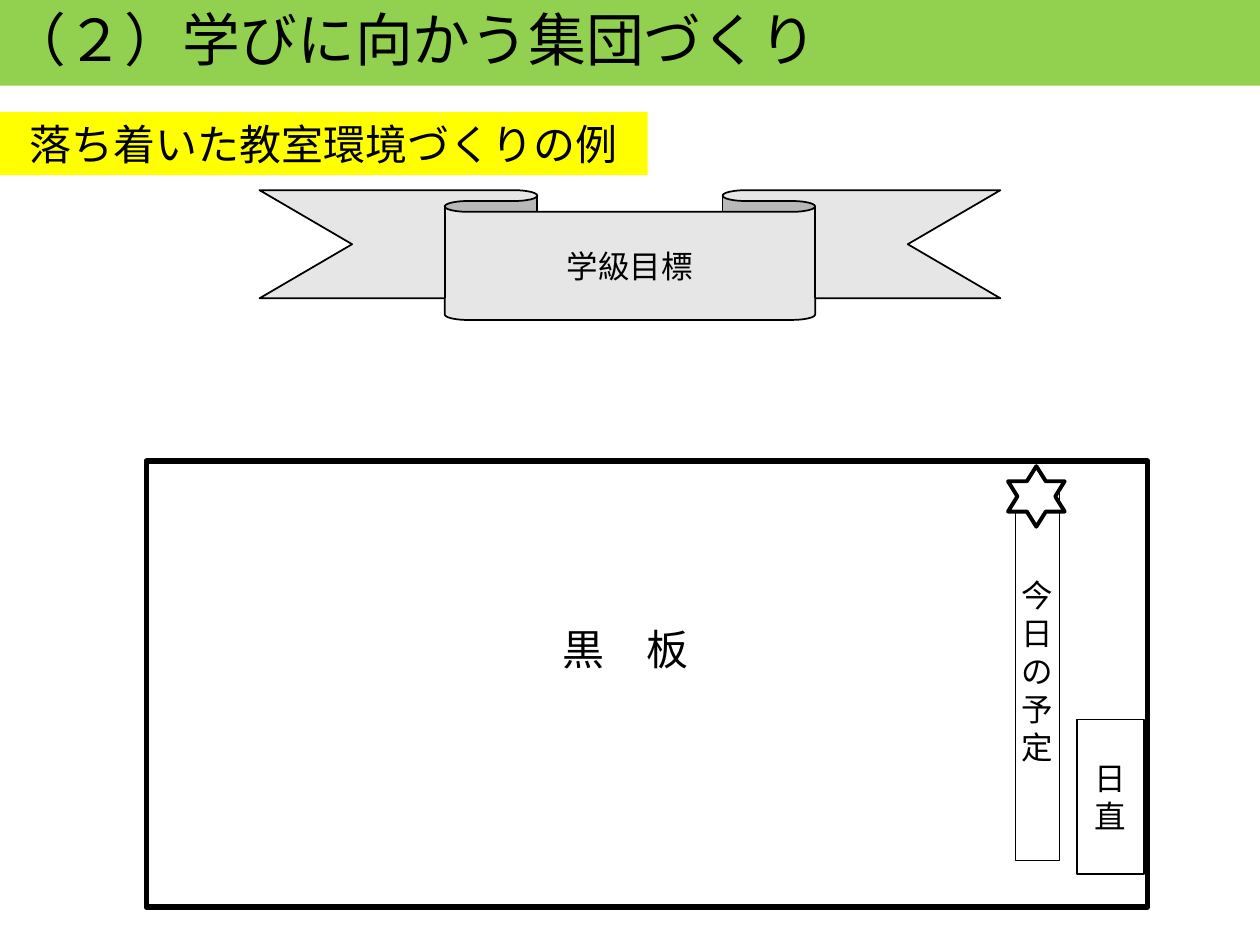
from pptx import Presentation
from pptx import util as u
from pptx.dml import color
from pptx.enum import shapes, text

COLUMNS, ROWS = 20, 15
SHAPE = shapes.MSO_SHAPE
MIDDLE = text.MSO_ANCHOR.MIDDLE
CENTER = text.PP_ALIGN.CENTER
NO_MARGINS = dict.fromkeys(
    ("margin_left", "margin_top", "margin_right", "margin_bottom"), 0)
TITLE_MARGINS = {
    "margin_left": u.Inches(0.07), "margin_right": u.Inches(0.07),
    "margin_top": u.Inches(0.04), "margin_bottom": u.Inches(0.04)}


def rgb(value):
    return color.RGBColor.from_string(value)


def apply(target, values):
    for name, value in values.items():
        setattr(target, name, value)


class ClassroomSlide:
    ink, paper = "000000", "FFFFFF"
    font = "Calibri"

    def __init__(self, presentation):
        self.cell_width = presentation.slide_width / COLUMNS
        self.cell_height = presentation.slide_height / ROWS
        self.slide = presentation.slides.add_slide(presentation.slide_layouts[6])

    def place(self, column, row, columns, rows):
        """Turn a grid area into left, top, width and height."""
        return [round(cells * size) for cells, size in zip(
            (column, row, columns, rows), (self.cell_width, self.cell_height) * 2)]

    def set_text(self, shape, lines, size, font=None, frame=None, paragraph_format=None):
        text_frame = shape.text_frame
        apply(text_frame, {"word_wrap": True, "vertical_anchor": MIDDLE, **(frame or {})})
        text_frame.text = "\n".join(lines)
        for paragraph in text_frame.paragraphs:
            apply(paragraph, {"alignment": CENTER, **(paragraph_format or {})})
            for run in paragraph.runs:
                apply(run.font, {"size": u.Pt(size), "name": font or self.font})
                run.font.color.rgb = rgb(self.ink)

    def shape(self, area, kind=SHAPE.RECTANGLE, fill=None, line=0):
        shape = self.slide.shapes.add_shape(kind, *self.place(*area))
        shape.shadow.inherit = False
        shape.fill.solid()
        shape.fill.fore_color.rgb = rgb(fill or self.paper)
        if line:
            shape.line.color.rgb = rgb(self.ink)
            shape.line.width = u.Pt(line)
        else:
            shape.line.fill.background()
        return shape

    def label(self, area, lines, size):
        box = self.slide.shapes.add_textbox(*self.place(*area))
        self.set_text(box, lines, size)

    def card(self, area, lines):
        """Draw a narrow outlined card that fills its width with text."""
        self.set_text(self.shape(area, line=1), lines, 18, frame=NO_MARGINS)


def main():
    presentation = Presentation()
    apply(presentation, {"slide_width": u.Inches(10), "slide_height": u.Inches(7.5)})
    page = ClassroomSlide(presentation)

    title = page.shape((0, 0, COLUMNS, 1.36), fill="92D050")
    page.set_text(title, ["（２）学びに向かう集団づくり"], 33, font="Arial", frame=TITLE_MARGINS,
                  paragraph_format={"alignment": text.PP_ALIGN.LEFT, "line_spacing": 0.9})
    heading = page.shape((0, 1.78, 10.28, 1), fill="FFFF00")
    page.set_text(heading, ["落ち着いた教室環境づくりの例"], 24)

    page.shape((2.32, 7.32, 15.9, 7.08), line=3)
    page.label((7.86, 9.8, 4.14, 1), ["黒　板"], 24)

    goal = page.shape((4.12, 3.02, 11.76, 2.06), SHAPE.DOWN_RIBBON, "E7E6E6", 1)
    page.set_text(goal, ["学級目標"], 18)

    page.card((17.1, 11.42, 1.06, 2.46), ["日", "直"])
    page.card((16.12, 7.64, 0.7, 6.02), ["今日の予定"])
    page.shape((16, 7.4, 0.9, 0.96), SHAPE.STAR_6_POINT, line=2.25)

    presentation.save("out.pptx")


if __name__ == "__main__":
    main()
